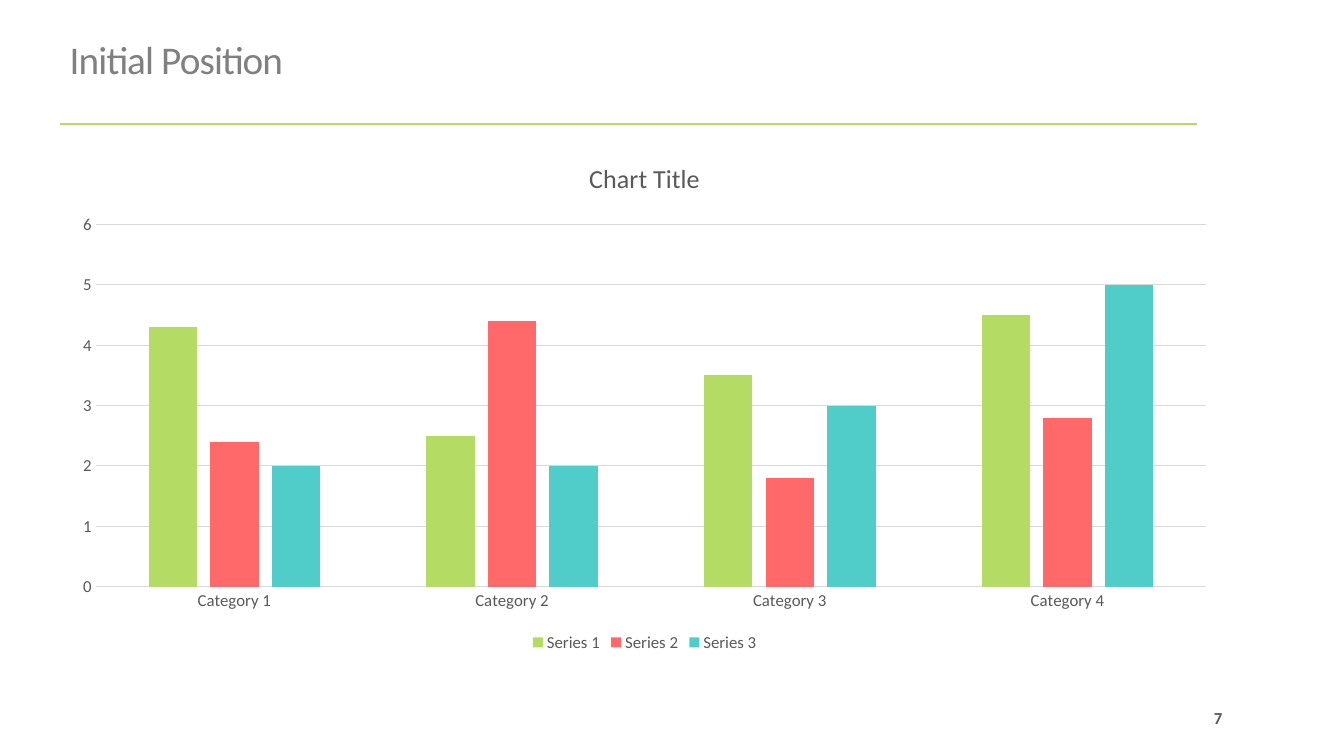
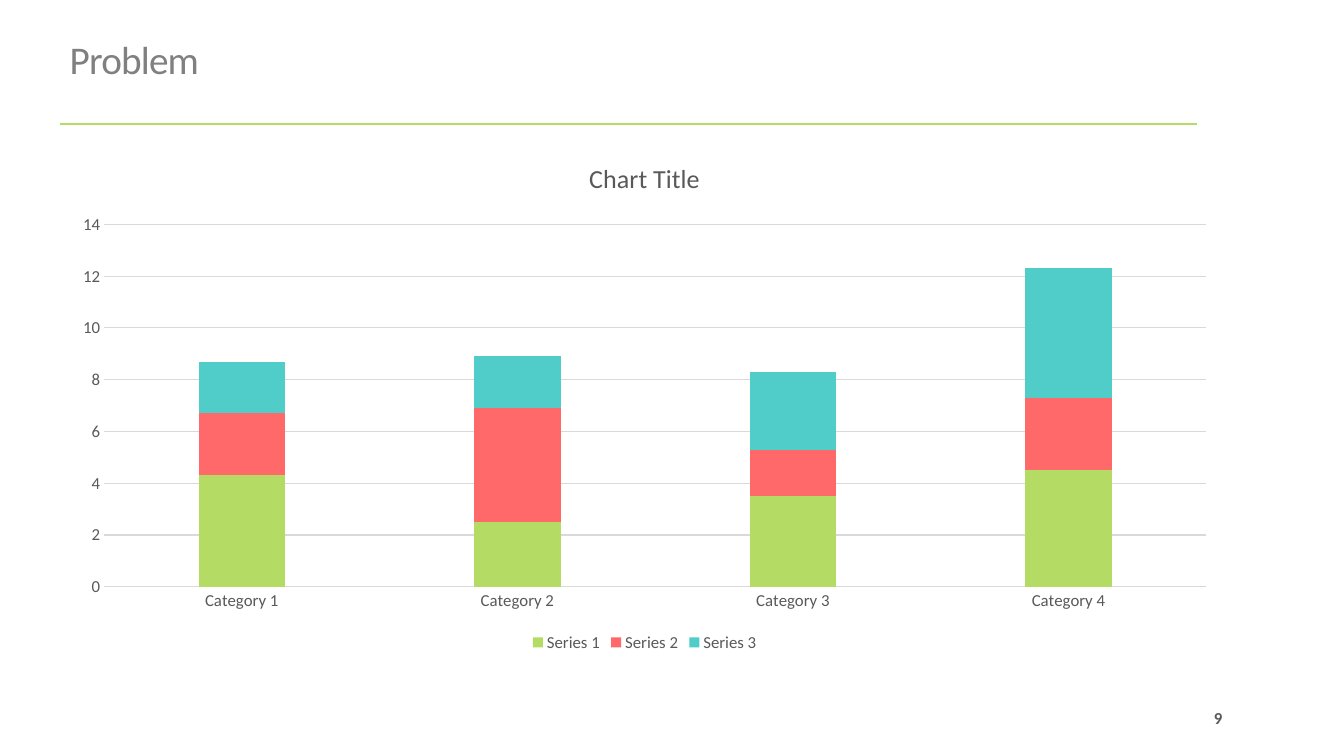
"""Build two chart slides that share one title, rule and page number style."""
from pptx import Presentation
from pptx.chart.data import CategoryChartData
from pptx.dml.color import RGBColor
from pptx.enum.chart import XL_CHART_TYPE, XL_LEGEND_POSITION, XL_TICK_MARK
from pptx.enum.shapes import MSO_CONNECTOR
from pptx.enum.text import MSO_ANCHOR, PP_ALIGN
from pptx.oxml.ns import qn
from pptx.util import Emu, Inches, Pt

LIME = RGBColor(0xB4, 0xDC, 0x64)
CORAL = RGBColor(0xFF, 0x69, 0x69)
TEAL = RGBColor(0x50, 0xCD, 0xC8)
GRAY = RGBColor(0x80, 0x80, 0x80)
DARK = RGBColor(0x59, 0x59, 0x59)
PALE = RGBColor(0xD9, 0xD9, 0xD9)
FACE = "Calibri"

COLS, ROWS = 160, 90
CELL = Inches(1) // 12
LEFT = 7.1

GROUPS = [f"Category {n}" for n in range(1, 5)]
SERIES = [
    ("Series 1", (4.3, 2.5, 3.5, 4.5), LIME),
    ("Series 2", (2.4, 4.4, 1.8, 2.8), CORAL),
    ("Series 3", (2, 2, 3, 5), TEAL),
]
PAGES = [
    ("Initial Position", 7, XL_CHART_TYPE.COLUMN_CLUSTERED, -27),
    ("Problem", 9, XL_CHART_TYPE.COLUMN_STACKED, 100),
]


def grid(*cells):
    return [Emu(round(n * CELL)) for n in cells]


def style(font, size=12, color=DARK, bold=False):
    font.name, font.size, font.bold = FACE, Pt(size), bold
    font.color.rgb = color


def write(frame, text, align=PP_ALIGN.LEFT, lead=None, track=None, **look):
    frame.word_wrap = True
    frame.vertical_anchor = MSO_ANCHOR.MIDDLE
    para = frame.paragraphs[0]
    para.alignment, para.line_spacing = align, lead
    run = para.add_run()
    run.text = text
    style(run.font, **look)
    if track is not None:
        run.font._element.set("spc", str(track))


class Deck:
    """Hold the shared style and the current slide."""

    def __init__(self):
        self.file = Presentation()
        self.file.slide_width, self.file.slide_height = grid(COLS, ROWS)

    def page(self, title, number):
        self.slide = self.file.slides.add_slide(self.file.slide_layouts[5])
        self.shapes = self.slide.shapes
        self.rule()
        self.title(title)
        self.number(number)

    def title(self, text):
        head = self.shapes.title
        head.left, head.top, head.width, head.height = grid(LEFT, 2.16, 135, 10.44)
        write(head.text_frame, text, lead=0.9, track=-60, size=28, color=GRAY)

    def rule(self):
        ends = grid(LEFT, 14.76, 142.56, 14.76)
        line = self.shapes.add_connector(MSO_CONNECTOR.STRAIGHT, *ends)
        line.line.color.rgb, line.line.width = LIME, Pt(2)
        props = line._element.spPr
        props.append(props.makeelement(qn("a:effectLst"), {}))

    def number(self, value):
        box = self.shapes.add_textbox(*grid(126.72, 83.04, 20, 4.8))
        write(box.text_frame, str(value), align=PP_ALIGN.RIGHT, bold=True)

    def chart(self, kind, overlap):
        data = CategoryChartData()
        data.categories = GROUPS
        for name, values, _ in SERIES:
            data.add_series(name, values)
        place = grid(LEFT, 16.7, 139.3, 61.44)
        chart = self.shapes.add_chart(kind, *place, data).chart
        style(chart.font, size=10)
        write(chart.chart_title.text_frame, "Chart Title", size=18.6)
        chart.chart_title.include_in_layout = False
        chart.has_legend = True
        chart.legend.position = XL_LEGEND_POSITION.BOTTOM
        chart.legend.include_in_layout = False
        style(chart.legend.font)
        self.axes(chart)
        plot = chart.plots[0]
        plot.gap_width, plot.overlap = 219, overlap
        plot.vary_by_categories = False
        for bars, (_, _, color) in zip(plot.series, SERIES):
            bars.format.fill.solid()
            bars.format.fill.fore_color.rgb = color

    def axes(self, chart):
        across, up = chart.category_axis, chart.value_axis
        for axis in (across, up):
            axis.major_tick_mark = axis.minor_tick_mark = XL_TICK_MARK.NONE
            style(axis.tick_labels.font)
        up.has_major_gridlines = True
        up.format.line.fill.background()
        for part in (across, up.major_gridlines):
            part.format.line.color.rgb = PALE
            part.format.line.width = Pt(0.75)


def main():
    deck = Deck()
    for title, number, kind, overlap in PAGES:
        deck.page(title, number)
        deck.chart(kind, overlap)
    deck.file.save("out.pptx")


if __name__ == "__main__":
    main()
